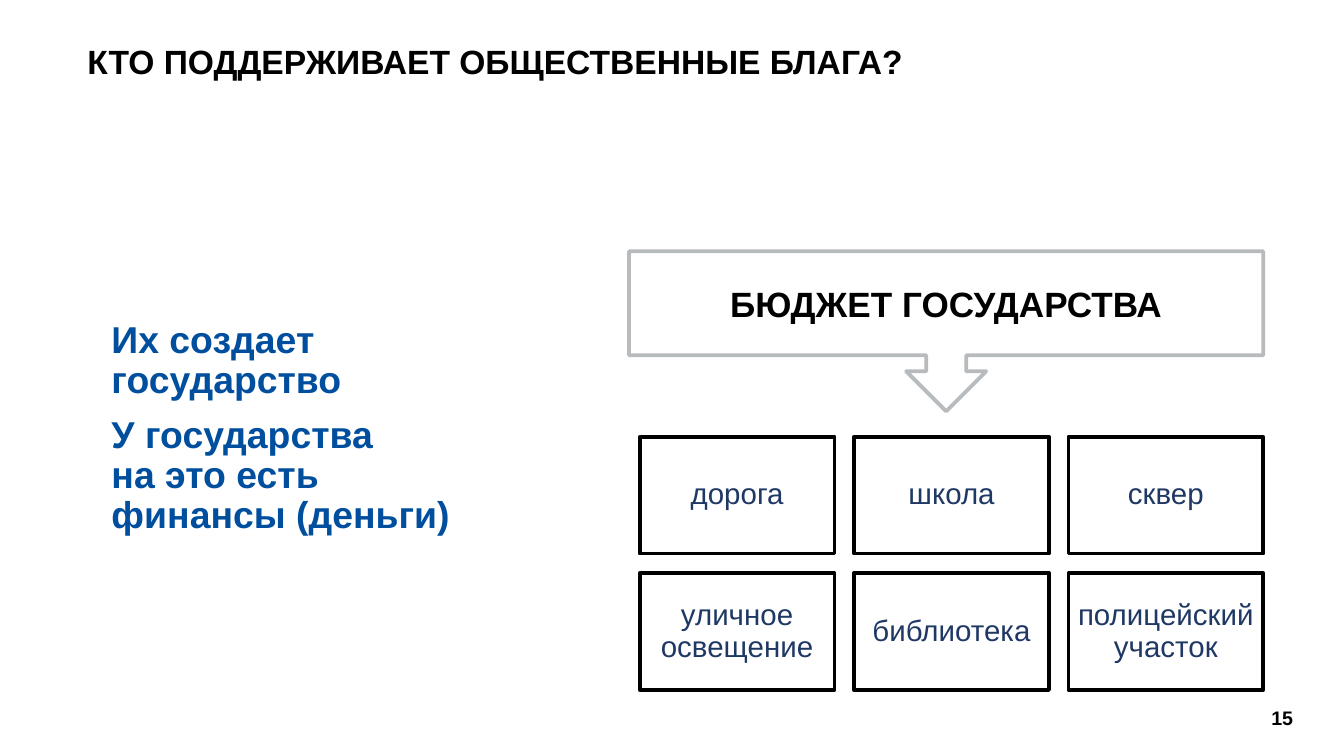
from pptx import Presentation
from pptx import util as u
from pptx.dml.color import RGBColor
from pptx.enum import shapes, text

BLACK = RGBColor(0x00, 0x00, 0x00)
WHITE = RGBColor(0xFF, 0xFF, 0xFF)
BLUE = RGBColor(0x00, 0x4E, 0x9E)
NAVY = RGBColor(0x1F, 0x38, 0x64)
GRAY = RGBColor(0xB7, 0xBB, 0xBE)

TITLE = "КТО ПОДДЕРЖИВАЕТ ОБЩЕСТВЕННЫЕ БЛАГА?"
POINTS = [
    ["Их создает государство"],
    ["У государства", "на это есть финансы (деньги)"],
]
BUDGET = "БЮДЖЕТ ГОСУДАРСТВА"
GOODS = [
    ["дорога", "школа", "сквер"],
    ["уличное освещение", "библиотека", "полицейский участок"],
]
PAGE = "15"

SLIDE_W = 10
SLIDE_H = SLIDE_W * 9 / 16
GRID_LEFT, GRID_RIGHT, GRID_TOP = 4.76, 9.4, 3.25
CELL_W, CELL_H = 1.45, 0.87
COLS = len(GOODS[0])
GAP = (GRID_RIGHT - GRID_LEFT - COLS * CELL_W) / (COLS - 1)

LEFT, CENTER = text.PP_ALIGN.LEFT, text.PP_ALIGN.CENTER
TOP, MIDDLE = text.MSO_ANCHOR.TOP, text.MSO_ANCHOR.MIDDLE


def inches(*values):
    return [u.Inches(v) for v in values]


def write(sp, paragraphs, size, color, bold=True, align=CENTER, anchor=MIDDLE,
          insets=(0.07, 0.04, 0.07, 0.04), spacing=0.9, before=0):
    """Fill a shape with paragraphs, each a list of lines."""
    tf = sp.text_frame
    tf.word_wrap = True
    tf.auto_size = text.MSO_AUTO_SIZE.NONE
    tf.vertical_anchor = anchor
    tf.margin_left, tf.margin_top, tf.margin_right, tf.margin_bottom = inches(*insets)
    for i, lines in enumerate(paragraphs):
        p = tf.add_paragraph() if i else tf.paragraphs[0]
        p.alignment = align
        p.line_spacing = spacing
        p.space_before = u.Pt(before if i else 0)
        for j, line in enumerate(lines):
            if j:
                p.add_line_break()
            r = p.add_run()
            r.text = line
            r.font.name = "Arial"
            r.font.size = u.Pt(size)
            r.font.bold = bold
            r.font.color.rgb = color


def add_box(s, kind, at, line_color):
    sp = s.shapes.add_shape(kind, *inches(*at))
    sp.shadow.inherit = False
    sp.fill.solid()
    sp.fill.fore_color.rgb = WHITE
    sp.line.color.rgb = line_color
    sp.line.width = u.Pt(2)
    return sp


def main():
    prs = Presentation()
    prs.slide_width, prs.slide_height = inches(SLIDE_W, SLIDE_H)
    s = prs.slides.add_slide(prs.slide_layouts[5])

    title = s.shapes.title
    title.left, title.top, title.width, title.height = inches(0.58, 0.3, 8.74, 0.9)
    write(title, [[TITLE]], 18, BLACK, align=LEFT, anchor=TOP)

    points = s.shapes.add_textbox(*inches(0.66, 2.35, 3.14, 2.68))
    write(points, POINTS, 20, BLUE, align=LEFT, anchor=TOP,
          insets=(0.17, 0.04, 0.15, 0.04), before=7.5)

    for row, names in enumerate(GOODS):
        for col, name in enumerate(names):
            at = (GRID_LEFT + col * (CELL_W + GAP), GRID_TOP + row * (CELL_H + GAP),
                  CELL_W, CELL_H)
            cell = add_box(s, shapes.MSO_SHAPE.RECTANGLE, at, BLACK)
            write(cell, [[name]], 15.8, NAVY, bold=False, insets=(0.05, 0.07, 0.05, 0.07))

    budget = add_box(s, shapes.MSO_SHAPE.DOWN_ARROW_CALLOUT, (4.68, 1.87, 4.72, 1.19), GRAY)
    for i, share in enumerate((0.25, 0.25, 0.25, 0.65)):
        budget.adjustments[i] = share
    write(budget, [[BUDGET]], 18.8, BLACK, spacing=1.0)

    page = s.shapes.add_textbox(*inches(9.14, 5.19, 0.8, 0.3))
    write(page, [[PAGE]], 10.5, BLACK, insets=(0.06,) * 4, spacing=1.0)

    prs.save("out.pptx")


if __name__ == "__main__":
    main()
